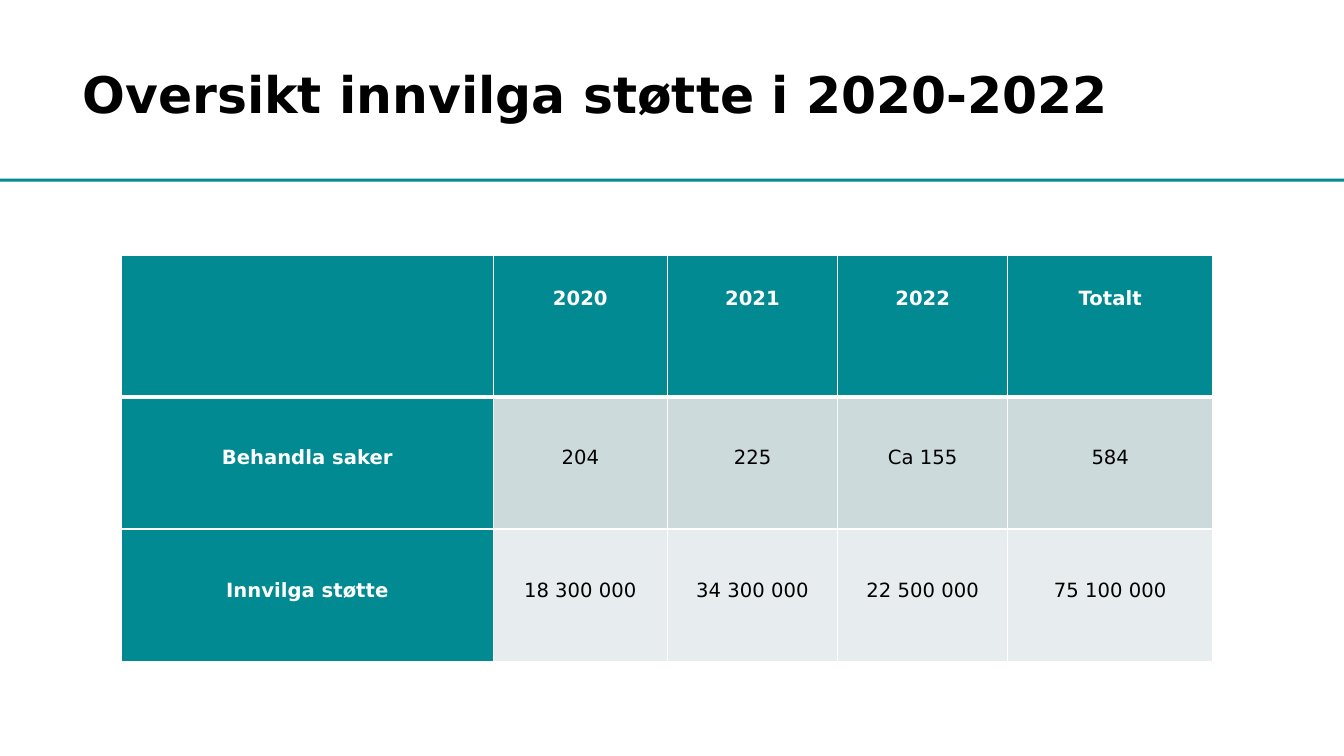
from dataclasses import dataclass

from lxml import etree
from pptx import Presentation
from pptx.dml.color import RGBColor
from pptx.enum.shapes import MSO_SHAPE
from pptx.enum.text import MSO_ANCHOR, PP_ALIGN
from pptx.oxml.ns import qn
from pptx.util import Cm, Pt

RECTANGLE = MSO_SHAPE.RECTANGLE
MIDDLE, TOP = MSO_ANCHOR.MIDDLE, MSO_ANCHOR.TOP
LEFT, CENTER = PP_ALIGN.LEFT, PP_ALIGN.CENTER
BLANK_LAYOUT = 6


@dataclass(frozen=True)
class Theme:
    font: str = "DejaVu Sans"
    teal: str = "018A92"
    bands: tuple = ("CCDADC", "E7EDEE")
    dark: str = "000000"
    light: str = "FFFFFF"
    title_size: int = 36
    table_size: int = 14
    table_leading: int = 13
    thin: int = 1
    thick: int = 3


class SlideBuilder:
    def __init__(self, page, theme):
        self.page = page
        self.theme = theme

    def add_text(self, para, text, size, color, bold, align, spacing):
        para.alignment = align
        para.line_spacing = spacing
        span = para.add_run()
        span.text = text
        span.font.name = self.theme.font
        span.font.size = Pt(size)
        span.font.bold = bold
        span.font.color.rgb = RGBColor.from_string(color)

    def bar(self, left, top, width, height):
        shape = self.page.shapes.add_shape(
            RECTANGLE, Cm(left), Cm(top), Cm(width), Cm(height))
        shape.shadow.inherit = False
        shape.fill.solid()
        shape.fill.fore_color.rgb = RGBColor.from_string(self.theme.teal)
        shape.line.fill.background()

    def title(self, text, left, top, width, height):
        box = self.page.shapes.add_textbox(
            Cm(left), Cm(top), Cm(width), Cm(height))
        frame = box.text_frame
        frame.word_wrap = True
        frame.vertical_anchor = MIDDLE
        frame.margin_left = frame.margin_right = 0
        frame.margin_top = frame.margin_bottom = 0
        self.add_text(frame.paragraphs[0], text, self.theme.title_size,
                      self.theme.dark, True, LEFT, 0.9)

    def border(self, cell, side, width):
        properties = cell._tc.get_or_add_tcPr()
        line = etree.SubElement(properties, qn(f"a:ln{side}"), w=str(Pt(width)))
        fill = etree.SubElement(line, qn("a:solidFill"))
        etree.SubElement(fill, qn("a:srgbClr"), val=self.theme.light)

    def cell(self, cell, text, row, column):
        theme = self.theme
        heading = row == 0 or column == 0
        # Borders come before the fill; a thick rule sits under the header
        thick_sides = {0: "B", 1: "T"}.get(row, "")
        for side in "LRTB":
            self.border(cell, side,
                        theme.thick if side in thick_sides else theme.thin)
        cell.fill.solid()
        cell.fill.fore_color.rgb = RGBColor.from_string(
            theme.teal if heading else theme.bands[(row - 1) % 2])
        # Text starts two lines down in the header, three lines down below it
        lines_above = 2 if row == 0 else 3
        cell.vertical_anchor = TOP
        cell.margin_left = cell.margin_right = Cm(0.18)
        cell.margin_top = Pt(lines_above * theme.table_leading)
        cell.margin_bottom = 0
        if text:
            self.add_text(cell.text_frame.paragraphs[0], text, theme.table_size,
                          theme.light if heading else theme.dark,
                          heading, CENTER, Pt(theme.table_leading))

    def table(self, rows, left, top, widths, heights):
        table = self.page.shapes.add_table(
            len(rows), len(widths), Cm(left), Cm(top),
            Cm(sum(widths)), Cm(sum(heights))).table
        for column, width in zip(table.columns, widths):
            column.width = Cm(width)
        for row, height in zip(table.rows, heights):
            row.height = Cm(height)
        for i, values in enumerate(rows):
            for j, text in enumerate(values):
                self.cell(table.cell(i, j), text, i, j)


def main():
    deck = Presentation()
    deck.slide_width, deck.slide_height = Cm(33.87), Cm(19.05)
    page = deck.slides.add_slide(deck.slide_layouts[BLANK_LAYOUT])
    builder = SlideBuilder(page, Theme())

    # Rule under the title
    builder.bar(0, 4.5, 33.87, 0.08)

    # Grants by year
    grants = [
        ("", "2020", "2021", "2022", "Totalt"),
        ("Behandla saker", "204", "225", "Ca 155", "584"),
        ("Innvilga støtte", "18 300 000", "34 300 000", "22 500 000", "75 100 000"),
    ]
    builder.table(grants, 3.06, 6.44,
                  widths=(9.37, 4.39, 4.29, 4.29, 5.16),
                  heights=(3.56, 3.33, 3.33))

    # Title
    builder.title("Oversikt innvilga støtte i 2020-2022", 2.08, 0.91, 26.67, 3.07)

    deck.save("out.pptx")


if __name__ == "__main__":
    main()
